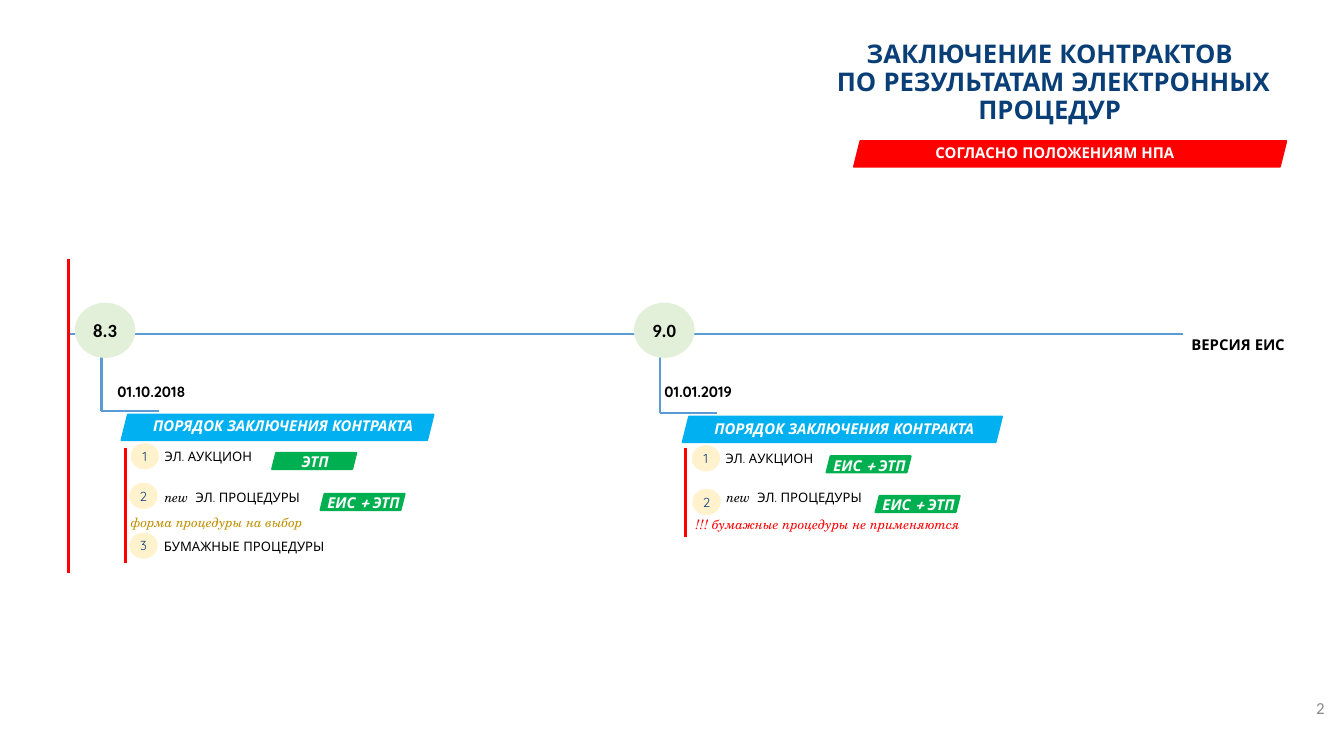
from pptx import Presentation
from pptx import util as u
from pptx.dml.color import RGBColor
from pptx.enum import shapes, text
from pptx.oxml.ns import qn
from lxml import etree

PX = 9144  # 100 px to the inch
HUE = {"navy": "0A3E77", "red": "FF0000", "sky": "00B0F0", "blue": "5B9BD5",
       "green": "00B050", "mint": "E2F0D9", "cream": "FFF2CC", "gold": "BF9000",
       "white": "FFFFFF", "black": "000000", "gray": "898989"}
SANS, SERIF, PLAIN = "Quicksand", "TeX Gyre Schola", "Calibri"
L, C, R, J = (text.PP_ALIGN.LEFT, text.PP_ALIGN.CENTER,
              text.PP_ALIGN.RIGHT, text.PP_ALIGN.JUSTIFY)

# Content: places are x, y in px
TITLE = ["ЗАКЛЮЧЕНИЕ КОНТРАКТОВ ", "ПО РЕЗУЛЬТАТАМ ЭЛЕКТРОННЫХ ПРОЦЕДУР "]
SUB = "СОГЛАСНО ПОЛОЖЕНИЯМ НПА"
AXIS = "ВЕРСИЯ ЕИС"
HEAD = "ПОРЯДОК ЗАКЛЮЧЕНИЯ КОНТРАКТА"
NEW = "new  "
STAGES = [
    {"name": "8.3", "dot": 113, "stem": (151, 611),
     "date": ("01.10.2018", 165), "bar": (181, 617, 464), "head": (186, 615),
     "rule": (187, 666, 838),
     "items": [("1", (196, 661), "", "ЭЛ. АУКЦИОН", (235, 663, 230)),
               ("2", (194, 720), NEW, "ЭЛ. ПРОЦЕДУРЫ", (235, 723, 420)),
               ("3", (194, 794), "", "БУМАЖНЫЕ ПРОЦЕДУРЫ", (234, 796, 420))],
     "tags": [("ЭТП", 405, 674), ("ЕИС + ЭТП", 477, 735)],
     "note": ("форма процедуры на выбор", 185, 761, "gold")},
    {"name": "9.0", "dot": 945, "stem": (982, 615),
     "date": ("01.01.2019", 979), "bar": (1016, 620, 475), "head": (1021, 619),
     "rule": (1020, 667, 799),
     "items": [("1", (1031, 664), "", "ЭЛ. АУКЦИОН ", (1070, 666, 230)),
               ("2", (1032, 729), NEW, "ЭЛ. ПРОЦЕДУРЫ", (1071, 723, 420))],
     "tags": [("ЕИС + ЭТП", 1230, 679), ("ЕИС + ЭТП", 1303, 738)],
     "note": ("!!! бумажные процедуры не применяются", 1025, 764, "red")},
]

prs = Presentation()
prs.slide_width, prs.slide_height = 2000 * PX, 1125 * PX
page = prs.slides.add_slide(prs.slide_layouts[5])


def rgb(hue):
    return RGBColor.from_string(HUE[hue])


def write(para, words, size, hue, face=SANS, bold=False, ital=False):
    run = para.add_run()
    run.text = words
    font = run.font
    font.name, font.size, font.bold, font.italic = face, u.Pt(size), bold, ital
    font.color.rgb = rgb(hue)


def label(x, y, w, h, words, size, hue, side=C, **look):
    box = page.shapes.add_textbox(x * PX, y * PX, w * PX, h * PX)
    box.text_frame.word_wrap = True
    para = box.text_frame.paragraphs[0]
    para.alignment = side
    if words:
        write(para, words, size, hue, **look)
    return box.text_frame


def block(kind, x, y, w, h, hue):
    item = page.shapes.add_shape(kind, x * PX, y * PX, w * PX, h * PX)
    item.shadow.inherit = False
    item.fill.solid()
    item.fill.fore_color.rgb = item.line.color.rgb = rgb(hue)
    item.line.width = u.Pt(2.25)
    return item


def slant(x, y, w, h, hue):
    block(shapes.MSO_SHAPE.PARALLELOGRAM, x, y, w, h, hue)


def disc(x, y, w, h, hue, words, size, ink, **look):
    frame = block(shapes.MSO_SHAPE.OVAL, x, y, w, h, hue).text_frame
    frame.word_wrap = False
    frame.vertical_anchor = text.MSO_ANCHOR.MIDDLE
    frame.paragraphs[0].alignment = C
    write(frame.paragraphs[0], words, size, ink, **look)


def line(x1, y1, x2, y2, hue, wide):
    rule = page.shapes.add_connector(shapes.MSO_CONNECTOR.STRAIGHT,
                                     x1 * PX, y1 * PX, x2 * PX, y2 * PX)
    rule.line.color.rgb = rgb(hue)
    rule.line.width = u.Pt(wide)
    etree.SubElement(rule.element.spPr, qn("a:effectLst"))


# Title and its ribbon
title = page.shapes.title
title.left, title.top, title.width, title.height = (
    n * PX for n in (1127, 57, 881, 103))
frame = title.text_frame
frame.word_wrap = True
frame.auto_size = text.MSO_AUTO_SIZE.NONE
frame.vertical_anchor = text.MSO_ANCHOR.TOP
for i, words in enumerate(TITLE):
    para = frame.add_paragraph() if i else frame.paragraphs[0]
    para.alignment = C
    para.line_spacing = 0.9
    write(para, words, 27.5, "navy", bold=True)
slant(1271, 210, 643, 38, "red")
label(1252, 209, 636, 37, SUB, 16, "white", bold=True)

# Time axis
line(102, 385, 102, 853, "red", 3)
line(104, 497, 1760, 497, "blue", 2.25)
label(1748, 494, 189, 37, AXIS, 16, "black", bold=True)

# Stages
for s in STAGES:
    x, y = s["stem"]
    line(x, 523, x, y, "blue", 2.25)
    line(x + 85, y, x, y, "blue", 2.25)
    disc(s["dot"], 452, 87, 79, "mint", s["name"], 20, "black",
         face=PLAIN, bold=True)
    day, x = s["date"]
    label(x, 565, 134, 37, day, 16, "black", L, bold=True)

    slant(*s["bar"], 38, "sky")
    label(*s["head"], 471, 37, HEAD, 16, "white", bold=True, ital=True)
    x, top, end = s["rule"]
    line(x, top, x, end, "red", 3)

    for num, spot, mark, words, (x, y, w) in s["items"]:
        disc(*spot, 39, 36, "cream", num, 14, "navy")
        para = label(x, y, w, 34, mark, 14, "black", J,
                     face=SERIF, ital=True).paragraphs[0]
        write(para, words, 14, "black")

    for words, x, y in s["tags"]:
        slant(x, y, 125, 24, "green")
        label(x - 11, y - 5, 150, 37, words, 16, "white", bold=True, ital=True)
    words, x, y, hue = s["note"]
    label(x, y, 420, 34, words, 14, hue, J, face=SERIF, ital=True)

# Page number
foot = label(1531, 1024, 450, 60, "2", 18, "gray", R, face=PLAIN)
foot.vertical_anchor = text.MSO_ANCHOR.MIDDLE

prs.save("out.pptx")
